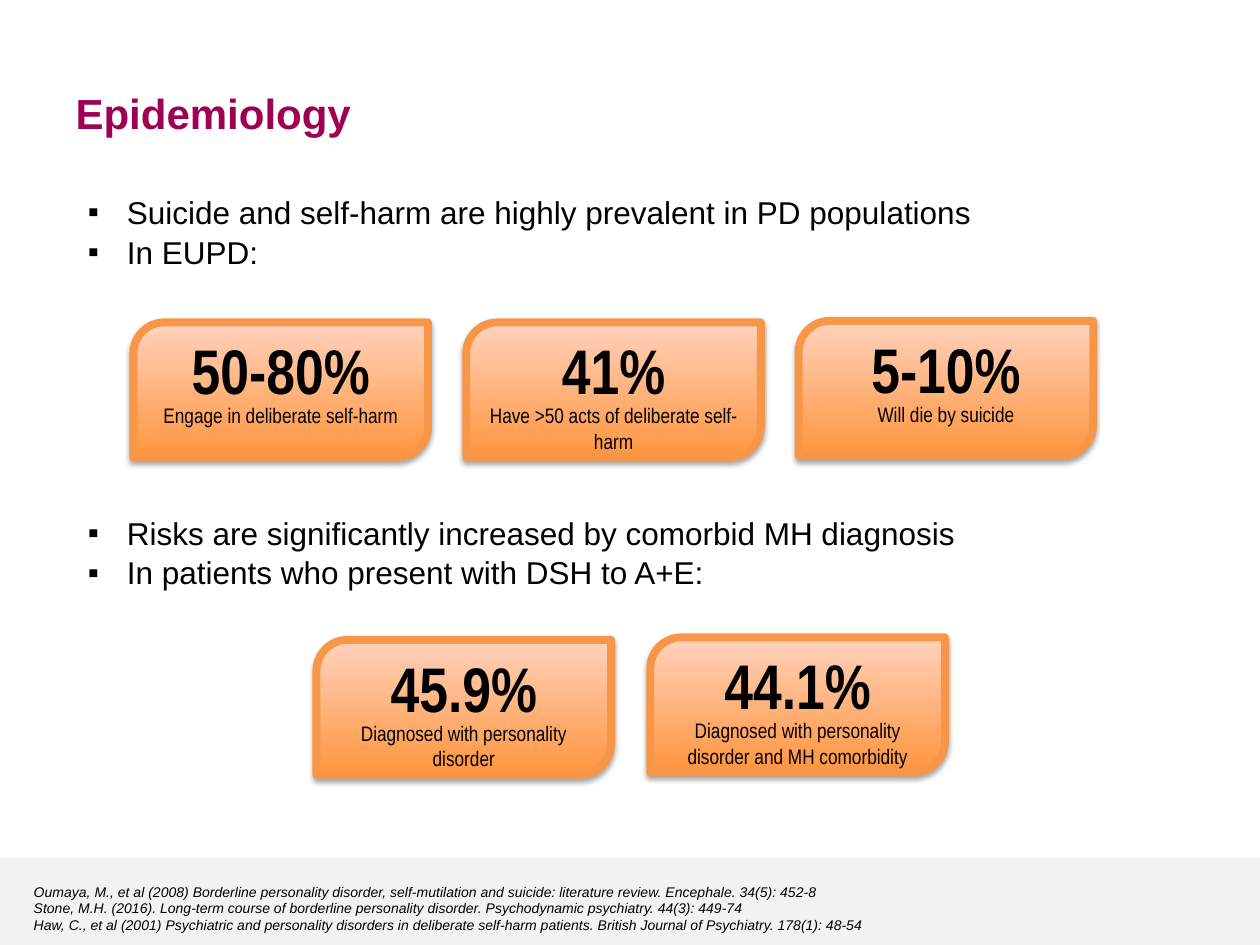
from dataclasses import dataclass

from lxml import etree
from pptx import Presentation
from pptx.dml.color import RGBColor
from pptx.enum.shapes import MSO_SHAPE
from pptx.enum.text import MSO_ANCHOR, MSO_AUTO_SIZE, PP_ALIGN
from pptx.oxml import parse_xml
from pptx.oxml.ns import nsdecls, qn
from pptx.util import Cm, Pt

RECT = MSO_SHAPE.RECTANGLE
CARD_SHAPE = MSO_SHAPE.ROUND_2_DIAG_RECTANGLE
LEFT, CENTER = PP_ALIGN.LEFT, PP_ALIGN.CENTER
TOP, MIDDLE = MSO_ANCHOR.TOP, MSO_ANCHOR.MIDDLE


@dataclass(frozen=True)
class Theme:
    font: str = "Arial"
    card_font: str = "Arial Narrow"
    title: RGBColor = RGBColor(0xA0, 0x00, 0x54)
    text: RGBColor = RGBColor(0, 0, 0)
    band: RGBColor = RGBColor(0xF2, 0xF2, 0xF2)
    card_line: RGBColor = RGBColor(0xF7, 0x96, 0x46)
    card_bottom: RGBColor = RGBColor(0xFF, 0x95, 0x3E)
    card_top: RGBColor = RGBColor(0xFF, 0xD2, 0xBD)
    title_size: int = 24
    body_size: int = 18
    figure_size: int = 36
    caption_size: int = 12
    reference_size: int = 8


THEME = Theme()
CARD_W, CARD_H = 5.94, 2.72
SHADOW = (
    f'<a:effectLst {nsdecls("a")}>'
    '<a:outerShdw blurRad="40000" dist="23000" dir="5400000" rotWithShape="0">'
    '<a:srgbClr val="000000"><a:alpha val="35000"/></a:srgbClr>'
    "</a:outerShdw></a:effectLst>"
)

PREVALENCE = ["Suicide and self-harm are highly prevalent in PD populations", "In EUPD:"]
COMORBIDITY = [
    "Risks are significantly increased by comorbid MH diagnosis",
    "In patients who present with DSH to A+E:",
]
# left, top, figure, caption
CARDS = [
    (2.69, 6.5, "50-80%", "Engage in deliberate self-harm"),
    (9.4, 6.5, "41%", "Have >50 acts of deliberate self-harm"),
    (16.1, 6.47, "5-10%", "Will die by suicide"),
    (6.38, 12.9, "45.9%", "Diagnosed with personality disorder"),
    (13.11, 12.85, "44.1%", "Diagnosed with personality disorder and MH comorbidity"),
]
REFERENCES = [
    "Oumaya, M., et al (2008) Borderline personality disorder, self-mutilation and suicide: "
    "literature review. Encephale. 34(5): 452-8",
    "Stone, M.H. (2016). Long-term course of borderline personality disorder. "
    "Psychodynamic psychiatry. 44(3): 449-74",
    "Haw, C., et al (2001) Psychiatric and personality disorders in deliberate self-harm "
    "patients. British Journal of Psychiatry. 178(1): 48-54",
]


def write(sp, lines, size, font=THEME.font, color=THEME.text, bold=False,
          italic=False, align=LEFT, anchor=TOP):
    """Fill a shape with one formatted run per paragraph."""
    tf = sp.text_frame
    tf.word_wrap = True
    tf.auto_size = MSO_AUTO_SIZE.NONE
    tf.vertical_anchor = anchor
    for i, line in enumerate(lines):
        p = tf.paragraphs[0] if i == 0 else tf.add_paragraph()
        p.alignment = align
        r = p.add_run()
        r.text = line
        r.font.name, r.font.size = font, Pt(size)
        r.font.bold, r.font.italic = bold, italic
        r.font.color.rgb = color


def add_text(shapes, left, top, width, height, lines, size, **style):
    sp = shapes.add_textbox(Cm(left), Cm(top), Cm(width), Cm(height))
    write(sp, lines, size, **style)
    return sp


def add_title(slide, text):
    sp = slide.shapes.title
    sp.left, sp.top, sp.width, sp.height = Cm(1.27), Cm(1.57), Cm(21.59), Cm(1.4)
    write(sp, [text], THEME.title_size, color=THEME.title, bold=True, anchor=MIDDLE)


def add_bullets(slide, top, lines):
    sp = add_text(slide.shapes, 1.52, top, 23.37, 1.8, lines, THEME.body_size)
    for p in sp.text_frame.paragraphs:
        p.line_spacing = 1.05
        pPr = p._p.get_or_add_pPr()
        pPr.set("marL", str(Cm(0.79)))
        pPr.set("indent", str(-Cm(0.79)))
        etree.SubElement(pPr, qn("a:buFont"), typeface=THEME.font)
        etree.SubElement(pPr, qn("a:buChar"), char="▪")


def add_card(slide, left, top, figure, caption):
    shapes = slide.shapes.add_group_shape().shapes
    sp = shapes.add_shape(CARD_SHAPE, Cm(left), Cm(top), Cm(CARD_W), Cm(CARD_H))
    sp.adjustments[0], sp.adjustments[1] = 0.23, 0
    sp.fill.gradient()
    sp.fill.gradient_angle = 90
    for stop, color in zip(sp.fill.gradient_stops, (THEME.card_bottom, THEME.card_top)):
        stop.color.rgb = color
    sp.line.color.rgb = THEME.card_line
    sp.line.width = Pt(4.5)
    sp._element.spPr.append(parse_xml(SHADOW))
    style = {"font": THEME.card_font, "align": CENTER}
    add_text(shapes, left, top + 1.5, CARD_W, 0.91, [caption], THEME.caption_size, **style)
    add_text(shapes, left, top + 0.06, CARD_W, 2.03, [figure], THEME.figure_size,
             bold=True, **style)


def add_references(slide):
    band = slide.shapes.add_shape(RECT, Cm(0), Cm(17.3), Cm(25.4), Cm(1.75))
    band.shadow.inherit = False
    band.fill.solid()
    band.fill.fore_color.rgb = THEME.band
    band.line.fill.background()
    add_text(slide.shapes, 0.43, 17.68, 21.08, 1.27, REFERENCES,
             THEME.reference_size, italic=True)


def main():
    prs = Presentation()
    prs.slide_width, prs.slide_height = Cm(25.4), Cm(19.05)
    slide = prs.slides.add_slide(prs.slide_layouts[5])
    add_title(slide, "Epidemiology")
    add_references(slide)
    add_bullets(slide, 3.73, PREVALENCE)
    add_bullets(slide, 10.19, COMORBIDITY)
    for card in CARDS:
        add_card(slide, *card)
    prs.save("out.pptx")


if __name__ == "__main__":
    main()
